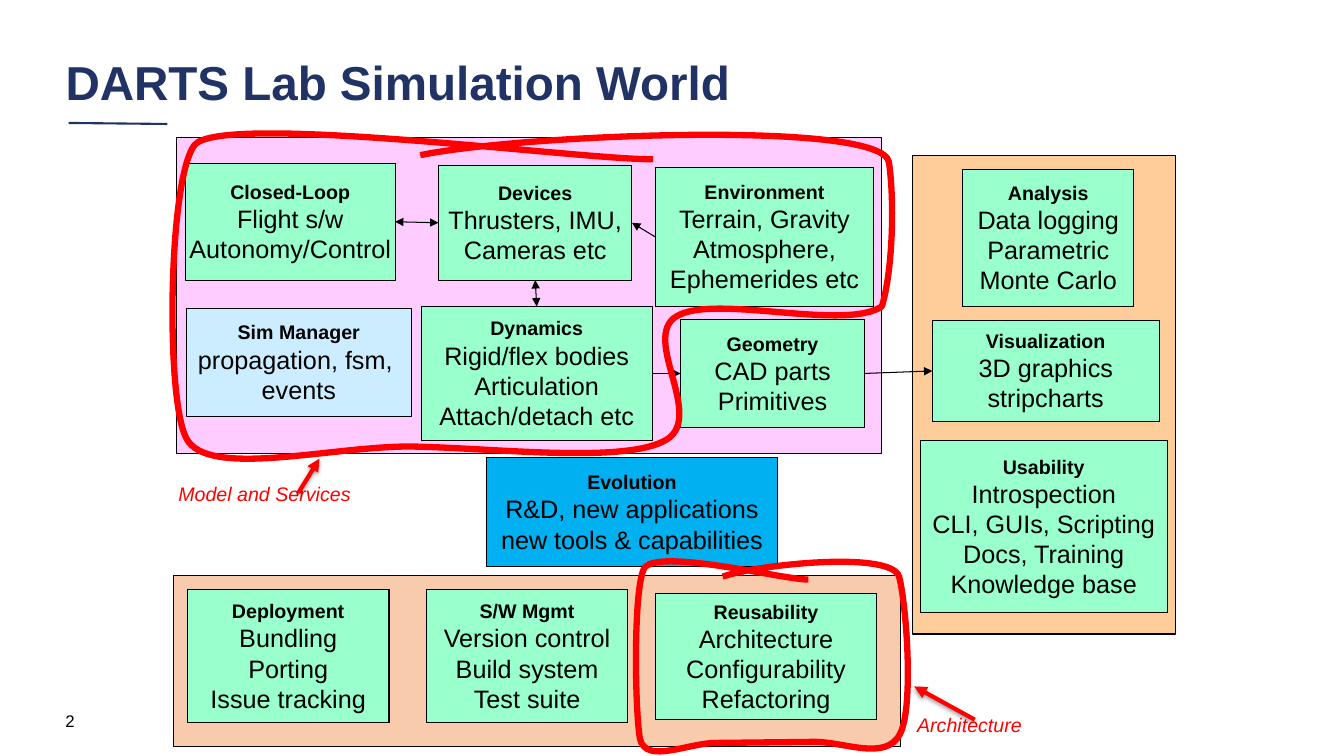
from dataclasses import dataclass
from typing import Any, NamedTuple

from lxml.etree import SubElement
from pptx import Presentation
from pptx.dml.color import RGBColor
from pptx.enum.shapes import MSO_CONNECTOR, MSO_SHAPE
from pptx.enum.text import MSO_ANCHOR, MSO_AUTO_SIZE, PP_ALIGN
from pptx.oxml.ns import qn
from pptx.util import Emu, Pt

PX = 9144
SLIDE_SIZE = {"slide_width": Emu(12192000), "slide_height": Emu(6858000)}
TOP, LEFT, BOTTOM, RIGHT = range(4)

BLACK = RGBColor(0x00, 0x00, 0x00)
RED = RGBColor(0xFF, 0x00, 0x00)
NAVY = RGBColor(0x21, 0x32, 0x65)
MINT = RGBColor(0x99, 0xFF, 0xCC)
PALE_BLUE = RGBColor(0xCC, 0xEC, 0xFF)
SKY = RGBColor(0x00, 0xB0, 0xF0)
PINK = RGBColor(0xFF, 0xCC, 0xFF)
ORANGE = RGBColor(0xFF, 0xCD, 0x9A)
PEACH = RGBColor(0xF8, 0xCB, 0xAD)

TITLE = {"name": "Arial", "size": Pt(34), "bold": True}
HEADING = {"name": "Arial", "size": Pt(14), "bold": True}
DETAIL = {"name": "Arial", "size": Pt(18), "bold": False}
CALLOUT = {"name": "Arial", "size": Pt(14), "italic": True}
PAGE_NUMBER = {"name": "Arial", "size": Pt(12)}


class Area(NamedTuple):
    left: int
    top: int
    width: int
    height: int


class Point(NamedTuple):
    x: int
    y: int


@dataclass
class Panel:
    area: Area
    fill: RGBColor
    lines: tuple[str, ...] = ()


@dataclass
class Link:
    start: str
    start_side: int
    end: str
    end_side: int
    heads: tuple[str, ...]


@dataclass
class Stroke:
    start: Point
    end: Point
    color: RGBColor
    width: float
    heads: tuple[str, ...] = ()
    shadow: bool = False


@dataclass
class Label:
    area: Area
    text: str
    style: dict[str, Any]
    color: RGBColor
    anchor: MSO_ANCHOR = MSO_ANCHOR.TOP


@dataclass
class Loop:
    area: Area
    start: tuple[int, ...]
    segments: tuple[tuple[int, ...], ...]


REGIONS = [
    Panel(Area(905, 154, 261, 475), ORANGE),
    Panel(Area(172, 571, 721, 170), PEACH),
    Panel(Area(175, 136, 700, 314), PINK),
]
TOPICS = [
    Panel(Area(418, 304, 229, 133), MINT,
          ("Dynamics", "Rigid/flex bodies", "Articulation", "Attach/detach etc")),
    Panel(Area(435, 164, 192, 114), MINT, ("Devices", "Thrusters, IMU,", "Cameras etc")),
    Panel(Area(650, 166, 217, 138), MINT,
          ("Environment", "Terrain, Gravity", "Atmosphere,", "Ephemerides etc")),
    Panel(Area(675, 317, 183, 107), MINT, ("Geometry", "CAD parts", "Primitives")),
    Panel(Area(925, 318, 225, 100), MINT, ("Visualization", "3D graphics", "stripcharts")),
    Panel(Area(955, 168, 170, 136), MINT,
          ("Analysis", "Data logging", "Parametric", "Monte Carlo")),
    Panel(Area(184, 162, 208, 116), MINT, ("Closed-Loop", "Flight s/w", "Autonomy/Control")),
    Panel(Area(913, 437, 245, 171), MINT,
          ("Usability", "Introspection", "CLI, GUIs, Scripting", "Docs, Training", "Knowledge base")),
    Panel(Area(423, 585, 200, 132), MINT,
          ("S/W Mgmt", "Version control", "Build system", "Test suite")),
    Panel(Area(650, 589, 220, 125), MINT,
          ("Reusability", "Architecture", "Configurability", "Refactoring")),
    Panel(Area(186, 585, 200, 132), MINT,
          ("Deployment", "Bundling", "Porting", "Issue tracking")),
    Panel(Area(483, 454, 288, 108), SKY,
          ("Evolution", "R&D, new applications", "new tools & capabilities")),
    Panel(Area(185, 306, 223, 107), PALE_BLUE, ("Sim Manager", "propagation, fsm, ", "events")),
]
LINKS = [
    Link("Dynamics", TOP, "Devices", BOTTOM, ("headEnd", "tailEnd")),
    Link("Devices", LEFT, "Closed-Loop", RIGHT, ("headEnd", "tailEnd")),
    Link("Devices", RIGHT, "Environment", LEFT, ("headEnd",)),
    Link("Geometry", LEFT, "Dynamics", RIGHT, ("headEnd",)),
    Link("Geometry", RIGHT, "Visualization", LEFT, ("tailEnd",)),
]
LOOPS = [
    Loop(Area(171, 132, 714, 323), (648, 158), (
        (580, 159, 219, 111, 193, 144), (167, 178, 164, 396, 185, 435),
        (206, 475, 327, 443, 406, 443), (485, 444, 614, 460, 658, 438),
        (703, 417, 635, 336, 671, 314), (708, 291, 838, 329, 875, 304),
        (885, 271, 888, 204, 882, 161), (875, 118, 513, 134, 417, 154))),
    Loop(Area(631, 557, 270, 189), (802, 575), (
        (777, 575, 651, 543, 639, 564), (628, 586, 630, 707, 635, 733),
        (641, 759, 684, 736, 713, 737), (806, 736),
        (836, 735, 879, 756, 893, 728), (907, 701, 899, 597, 892, 572),
        (884, 546, 752, 560, 717, 572))),
]
LABELS = [
    Label(Area(55, 695, 300, 40), "2", PAGE_NUMBER, BLACK, MSO_ANCHOR.MIDDLE),
    Label(Area(167, 473, 315, 34), "Model and Services", CALLOUT, RED),
    Label(Area(900, 702, 225, 34), "Architecture", CALLOUT, RED),
]
STROKES = [
    Stroke(Point(68, 122), Point(166, 123), NAVY, 1.5),
    Stroke(Point(907, 681), Point(967, 714), RED, 3, ("headEnd",), True),
    Stroke(Point(317, 455), Point(296, 489), RED, 3, ("headEnd",), True),
]


def emu(lengths: tuple[int, ...]) -> list[Emu]:
    return [Emu(length * PX) for length in lengths]


def apply(target: Any, values: dict[str, Any]) -> None:
    for attribute, value in values.items():
        setattr(target, attribute, value)


def place(shape: Any, area: Area) -> None:
    apply(shape, dict(zip(Area._fields, emu(area))))


def write(paragraph: Any, text: str, style: dict[str, Any], color: RGBColor) -> None:
    run = paragraph.add_run()
    run.text = text
    apply(run.font, style)
    run.font.color.rgb = color


def draw_panel(shapes: Any, panel: Panel) -> Any:
    rectangle = shapes.add_shape(MSO_SHAPE.RECTANGLE, *emu(panel.area))
    rectangle.shadow.inherit = False
    rectangle.fill.solid()
    rectangle.fill.fore_color.rgb = panel.fill
    rectangle.line.color.rgb = BLACK
    rectangle.line.width = Pt(0.75)
    frame = rectangle.text_frame
    apply(frame, {"word_wrap": False, "vertical_anchor": MSO_ANCHOR.MIDDLE})
    for index, text in enumerate(panel.lines):
        paragraph = frame.add_paragraph() if index else frame.paragraphs[0]
        paragraph.alignment = PP_ALIGN.CENTER
        write(paragraph, text, DETAIL if index else HEADING, BLACK)
    return rectangle


def draw_stroke(shapes: Any, stroke: Stroke) -> Any:
    connector = shapes.add_connector(MSO_CONNECTOR.STRAIGHT, *emu(stroke.start + stroke.end))
    connector.line.color.rgb = stroke.color
    connector.line.width = Pt(stroke.width)
    for head in stroke.heads:
        SubElement(connector.line._get_or_add_ln(), qn(f"a:{head}"), type="triangle")
    effects = SubElement(connector._element.spPr, qn("a:effectLst"))
    if stroke.shadow:
        shadow = SubElement(effects, qn("a:outerShdw"), blurRad=str(Pt(3.1)),
                            dist=str(Pt(1.6)), dir="5400000", rotWithShape="0")
        tint = SubElement(shadow, qn("a:srgbClr"), val=str(BLACK))
        SubElement(tint, qn("a:alpha"), val="38000")
    return connector


def draw_link(shapes: Any, link: Link, topics: dict[str, Any]) -> None:
    connector = draw_stroke(shapes, Stroke(Point(0, 0), Point(0, 0), BLACK, 0.75, link.heads))
    connector.begin_connect(topics[link.start], link.start_side)
    connector.end_connect(topics[link.end], link.end_side)


def draw_loop(shapes: Any, loop: Loop) -> None:
    builder = shapes.build_freeform(*emu(loop.start))
    builder.add_line_segments([emu(segment[-2:]) for segment in loop.segments], close=False)
    outline = builder.convert_to_shape()
    place(outline, loop.area)
    track = outline._element.find(f".//{qn('a:path')}")
    track.set("w", str(loop.area.width * PX))
    track.set("h", str(loop.area.height * PX))
    for step, segment in zip(list(track)[1:], loop.segments):
        if len(segment) == 6:
            step.tag = qn("a:cubicBezTo")
    for step, segment in zip(track, (loop.start, *loop.segments)):
        for point in list(step):
            step.remove(point)
        for x, y in zip(segment[::2], segment[1::2]):
            SubElement(step, qn("a:pt"), x=str((x - loop.area.left) * PX),
                       y=str((y - loop.area.top) * PX))
    outline.shadow.inherit = False
    outline.fill.background()
    outline.line.color.rgb = RED
    outline.line.width = Pt(4.5)


def draw_label(shapes: Any, label: Label) -> None:
    frame = shapes.add_textbox(*emu(label.area)).text_frame
    apply(frame, {"word_wrap": True, "vertical_anchor": label.anchor})
    write(frame.paragraphs[0], label.text, label.style, label.color)


def set_title(title: Any, text: str, area: Area) -> None:
    place(title, area)
    frame = title.text_frame
    apply(frame, {"word_wrap": True, "auto_size": MSO_AUTO_SIZE.NONE,
                  "vertical_anchor": MSO_ANCHOR.MIDDLE})
    apply(frame.paragraphs[0], {"alignment": PP_ALIGN.LEFT, "line_spacing": 0.9})
    write(frame.paragraphs[0], text, TITLE, NAVY)


def main() -> None:
    presentation = Presentation()
    apply(presentation, SLIDE_SIZE)
    shapes = presentation.slides.add_slide(presentation.slide_layouts[5]).shapes
    set_title(shapes.title, "DARTS Lab Simulation World", Area(55, 46, 1112, 76))
    for region in REGIONS:
        draw_panel(shapes, region)
    topics = {topic.lines[0]: draw_panel(shapes, topic) for topic in TOPICS}
    for link in LINKS:
        draw_link(shapes, link, topics)
    for loop in LOOPS:
        draw_loop(shapes, loop)
    for label in LABELS:
        draw_label(shapes, label)
    for stroke in STROKES:
        draw_stroke(shapes, stroke)
    presentation.save("out.pptx")


if __name__ == "__main__":
    main()
